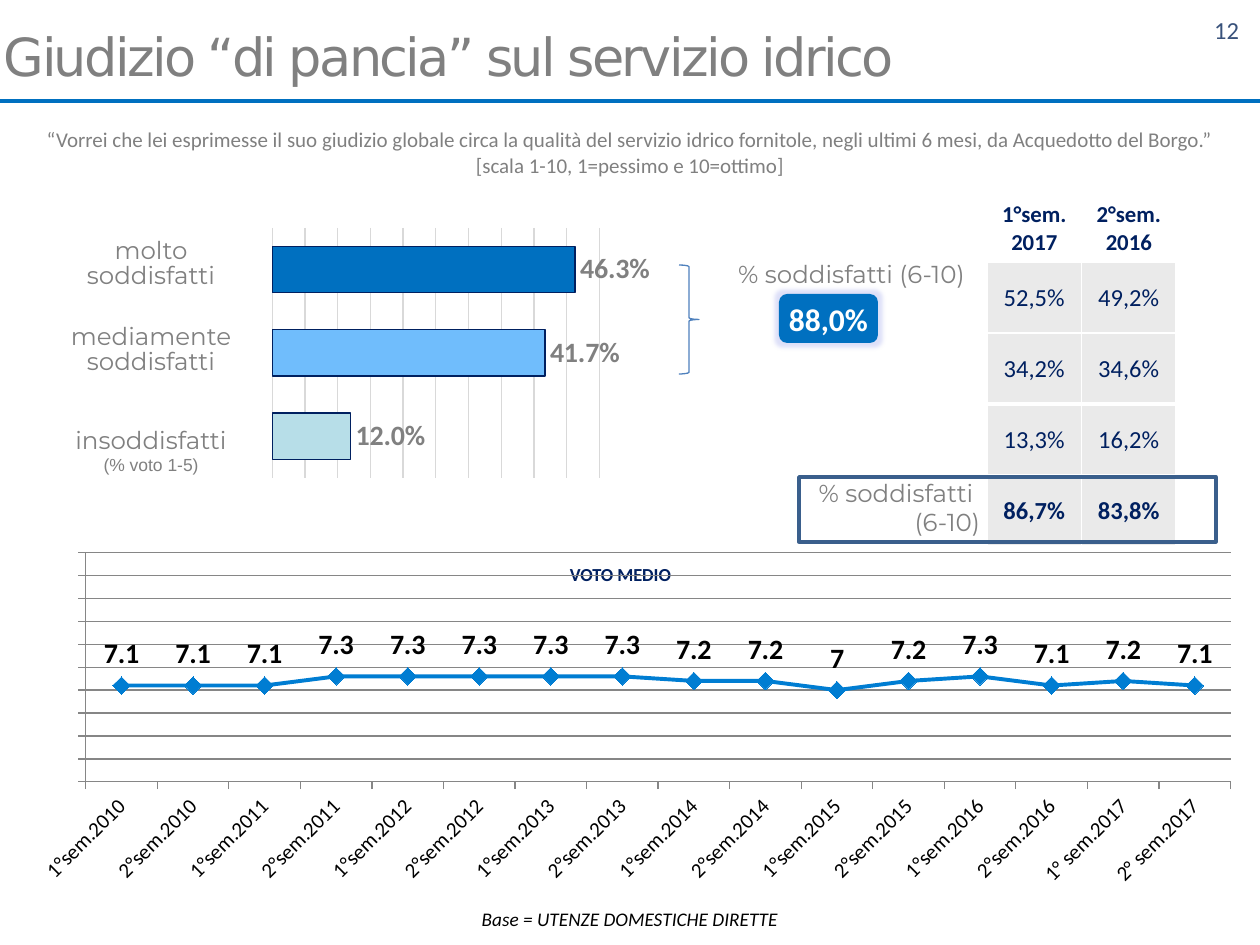
from pptx import Presentation
from pptx.chart.data import CategoryChartData
from pptx.dml.color import RGBColor
from pptx.enum.chart import XL_CHART_TYPE as CT, XL_LABEL_POSITION as LP
from pptx.enum.chart import XL_MARKER_STYLE, XL_TICK_LABEL_POSITION, XL_TICK_MARK
from pptx.enum.shapes import MSO_CONNECTOR, MSO_SHAPE as SHAPE
from pptx.enum.text import MSO_ANCHOR as ANCHOR, PP_ALIGN as ALIGN
from pptx.oxml import parse_xml
from pptx.oxml.ns import nsdecls, qn
from pptx.util import Pt

SCALE = 914400 / 126
GREY, NAVY, BLUE, WHITE, BLACK = "808080", "002060", "0070C0", "FFFFFF", "000000"
LABEL_FONT = "Montserrat"


def px(*lengths):
    return [round(length * SCALE) for length in lengths]


def rgb(code):
    return RGBColor.from_string(code)


def style_font(font, size, color, name="Calibri", bold=False, italic=False):
    font.size, font.name, font.bold, font.italic = Pt(size), name, bold, italic
    font.color.rgb = rgb(color)


def write(frame, text, size, color, align=ALIGN.CENTER, anchor=ANCHOR.TOP,
          insets=(13, 6, 13, 6), spacing=None, **style):
    frame.text = text
    frame.word_wrap = True
    frame.vertical_anchor = anchor
    (frame.margin_left, frame.margin_top,
     frame.margin_right, frame.margin_bottom) = px(*insets)
    for paragraph in frame.paragraphs:
        paragraph.alignment = align
        if spacing:
            paragraph.line_spacing = Pt(spacing)
        for run in paragraph.runs:
            style_font(run.font, size, color, **style)


def add_text(slide, box, text, size, color, **options):
    frame = slide.shapes.add_textbox(*px(*box)).text_frame
    write(frame, text, size, color, **options)
    return frame


def add_outline(slide, kind, box, fill=None, line=None, width=1):
    shape = slide.shapes.add_shape(kind, *px(*box))
    shape.shadow.inherit = False
    if fill:
        shape.fill.solid()
        shape.fill.fore_color.rgb = rgb(fill)
    else:
        shape.fill.background()
    if line:
        shape.line.color.rgb = rgb(line)
        shape.line.width = Pt(width)
    else:
        shape.line.fill.background()
    return shape


def add_plot(slide, kind, box, categories, values, plot_area, number_format):
    """Add a one-series chart with a fixed inner plot area and bold value labels."""
    data = CategoryChartData()
    data.categories = categories
    data.add_series("Series 1", values)
    chart = slide.shapes.add_chart(kind, *px(*box), data).chart
    chart.has_legend = chart.has_title = False
    style_font(chart.font, 12, BLACK)
    area = chart._chartSpace.chart.plotArea
    for layout in area.findall(qn("c:layout")):
        area.remove(layout)
    sizes = "".join(f'<c:{tag} val="{share}"/>' for tag, share in zip("xywh", plot_area))
    area.insert(0, parse_xml(
        f'<c:layout {nsdecls("c")}><c:manualLayout><c:layoutTarget val="inner"/>'
        f'<c:xMode val="edge"/><c:yMode val="edge"/>{sizes}</c:manualLayout></c:layout>'))
    plot = chart.plots[0]
    plot.vary_by_categories = False
    plot.has_data_labels = True
    plot.data_labels.show_value = True
    plot.data_labels.number_format = number_format
    plot.data_labels.number_format_is_linked = False
    return chart, plot


def set_scale(axis, low, high, step, grid):
    axis.minimum_scale, axis.maximum_scale, axis.major_unit = low, high, step
    axis.has_major_gridlines = True
    axis.major_gridlines.format.line.color.rgb = rgb(grid)
    axis.major_gridlines.format.line.width = Pt(0.75)


def header(slide, box):
    left, top, width, height = box
    title = slide.shapes.title
    title.left, title.top, title.width, title.height = px(left - 16, top + 16, 1225, 79)
    write(title.text_frame, "Giudizio “di pancia” sul servizio idrico", 30, GREY,
          align=ALIGN.LEFT, anchor=ANCHOR.MIDDLE, insets=(20, 6, 13, 6), name="DejaVu Sans")
    title.text_frame.paragraphs[0].runs[0].font._element.set("spc", "-150")
    rule = slide.shapes.add_connector(
        MSO_CONNECTOR.STRAIGHT, *px(left - 1, top + height, left + width + 4, top + height))
    rule.line.color.rgb = rgb(BLUE)
    rule.line.width = Pt(2)
    rule._element.spPr.append(parse_xml(f'<a:effectLst {nsdecls("a")}/>'))
    add_text(slide, (left + 958, top + 9, 294, 50), "12", 14, "39527B", align=ALIGN.RIGHT)


def satisfaction_bars(slide, box):
    left, top, width, height = box
    labels = [(26, "molto soddisfatti", 14), (112, "mediamente soddisfatti", 14),
              (211, "insoddisfatti\n(% voto 1-5)", None)]
    for offset, text, spacing in labels:
        label = add_text(slide, (left - 2, top + offset, 218, 76), text, 14, GREY,
                         spacing=spacing, name=LABEL_FONT)
    style_font(label.paragraphs[1].runs[0].font, 10, GREY, "Arial")

    chart, plot = add_plot(slide, CT.BAR_CLUSTERED, (left + 207, top, 425, height),
                           ["1", "2", "3"], [0.463, 0.417, 0.12],
                           (0.05, 0.07, 0.77, 0.87), "0.0%")
    set_scale(chart.value_axis, 0, 0.5, 0.05, "D9D9D9")
    chart.value_axis.visible = chart.category_axis.visible = False
    chart.category_axis.reverse_order = True
    plot.gap_width = 80
    plot.data_labels.position = LP.OUTSIDE_END
    style_font(plot.data_labels.font, 16, GREY, bold=True)
    for index, color in enumerate([BLUE, "70BDFC", "B7DEE8"]):
        bar = plot.series[0].points[index].format
        bar.fill.solid()
        bar.fill.fore_color.rgb = rgb(color)
        bar.line.color.rgb = rgb(NAVY)
        bar.line.width = Pt(0.75)


def satisfied_total(slide, box):
    left, top, width, height = box
    add_outline(slide, SHAPE.RIGHT_BRACE, (left, top + 10, 20, height - 10),
                line="4F81BD", width=0.75)
    add_text(slide, (left - 3, top - 1, width, 39), "% soddisfatti (6-10)", 14, GREY,
             align=ALIGN.RIGHT, anchor=ANCHOR.MIDDLE, insets=(13, 0, 13, 0), name=LABEL_FONT)
    badge = add_outline(slide, SHAPE.ROUNDED_RECTANGLE, (left + 100, top + 39, 99, 49), fill=BLUE)
    write(badge.text_frame, "88,0%", 18, WHITE, anchor=ANCHOR.MIDDLE,
          insets=(0, 0, 0, 0), bold=True)
    badge._element.spPr.find(qn("a:effectLst")).append(parse_xml(
        f'<a:glow {nsdecls("a")} rad="63500"><a:srgbClr val="C8CCF5">'
        '<a:alpha val="60000"/></a:srgbClr></a:glow>'))


def previous_surveys(slide, box):
    left, top, width, height = box
    rows = [("1°sem. 2017", "2°sem. 2016"), ("52,5%", "49,2%"), ("34,2%", "34,6%"),
            ("13,3%", "16,2%"), ("86,7%", "83,8%")]
    table = slide.shapes.add_table(len(rows), 2, *px(*box)).table
    table.first_row = table.horz_banding = False
    for column in table.columns:
        column.width = px(width / 2)[0]
    for r, values in enumerate(rows):
        heading = r == 0
        table.rows[r].height = px(67 if heading else 71)[0]
        for c, value in enumerate(values):
            cell = table.cell(r, c)
            write(cell.text_frame, value, 13 if heading else 14, NAVY,
                  bold=heading or r == len(rows) - 1)
            cell.vertical_anchor = ANCHOR.MIDDLE
            (cell.margin_left, cell.margin_top, cell.margin_right,
             cell.margin_bottom) = px(*((5, 6, 5, 6) if heading else (1, 1, 1, 0)))
            for side in "LRTB":
                thick = (r, side) in ((2, "B"), (3, "T"))
                cell._tc.get_or_add_tcPr().append(parse_xml(
                    f'<a:ln{side} {nsdecls("a")} w="{28575 if thick else 12700}">'
                    f'<a:solidFill><a:srgbClr val="{WHITE}"/></a:solidFill></a:ln{side}>'))
            if heading:
                cell.fill.background()
            else:
                cell.fill.solid()
                cell.fill.fore_color.rgb = rgb("EAEAEA")
    add_text(slide, (left - 296, top + 293, 302, 39), "% soddisfatti \n(6-10)", 14, GREY,
             align=ALIGN.RIGHT, anchor=ANCHOR.MIDDLE, insets=(13, 0, 13, 0), name=LABEL_FONT)
    add_outline(slide, SHAPE.RECTANGLE, (left - 188, top + 282, 417, 65), line="3A5F8C", width=2)


def average_vote(slide, box):
    left, top, width, height = box
    add_text(slide, (left + 445, top + 8, 277, 33), "VOTO MEDIO", 10.5, NAVY,
             spacing=11, bold=True)
    periods = [f"{half}°sem.{year}" for year in range(2010, 2017) for half in (1, 2)]
    periods += ["1° sem.2017", "2° sem.2017"]
    votes = [7.1, 7.1, 7.1, 7.3, 7.3, 7.3, 7.3, 7.3,
             7.2, 7.2, 7, 7.2, 7.3, 7.1, 7.2, 7.1]
    chart, plot = add_plot(slide, CT.LINE_MARKERS, box, periods, votes,
                           (0.04, 0, 0.94, 0.66), "General")
    set_scale(chart.value_axis, 5, 10, 0.5, "868686")
    chart.value_axis.tick_label_position = XL_TICK_LABEL_POSITION.NONE
    for axis in (chart.value_axis, chart.category_axis):
        axis.major_tick_mark = XL_TICK_MARK.OUTSIDE
        axis.format.line.color.rgb = rgb("868686")
    style_font(chart.category_axis.tick_labels.font, 12, BLACK)
    label_body = chart.category_axis._element.find(qn("c:txPr")).find(qn("a:bodyPr"))
    label_body.set("rot", "-2700000")
    plot.data_labels.position = LP.ABOVE
    style_font(plot.data_labels.font, 16, BLACK, bold=True)
    vote = plot.series[0]
    vote.smooth = False
    vote.format.line.width = Pt(2.25)
    vote.marker.style, vote.marker.size = XL_MARKER_STYLE.DIAMOND, 10
    vote.marker.format.fill.solid()
    for color in (vote.format.line.color, vote.marker.format.fill.fore_color,
                  vote.marker.format.line.color):
        color.rgb = rgb("007DD2")


def survey_base(slide, box):
    base = add_outline(slide, SHAPE.ROUNDED_RECTANGLE, box, fill=WHITE)
    write(base.text_frame, "Base = UTENZE DOMESTICHE DIRETTE", 11, BLACK,
          anchor=ANCHOR.MIDDLE, insets=(0, 0, 0, 0), italic=True)


def main():
    deck = Presentation()
    deck.slide_width, deck.slide_height = px(1260, 945)
    slide = deck.slides.add_slide(deck.slide_layouts[5])
    header(slide, (0, 0, 1260, 101))
    add_text(slide, (22, 121, 1216, 63),
             "“Vorrei che lei esprimesse il suo giudizio globale circa la qualità del servizio "
             "idrico fornitole, negli ultimi 6 mesi, da Acquedotto del Borgo.”\n"
             "[scala 1-10, 1=pessimo e 10=ottimo]", 12, GREY)
    satisfaction_bars(slide, (44, 208, 632, 287))
    satisfied_total(slide, (679, 255, 302, 119))
    previous_surveys(slide, (987, 195, 189, 351))
    average_vote(slide, (37, 552, 1218, 348))
    survey_base(slide, (474, 900, 312, 37))
    deck.save("out.pptx")


if __name__ == "__main__":
    main()
